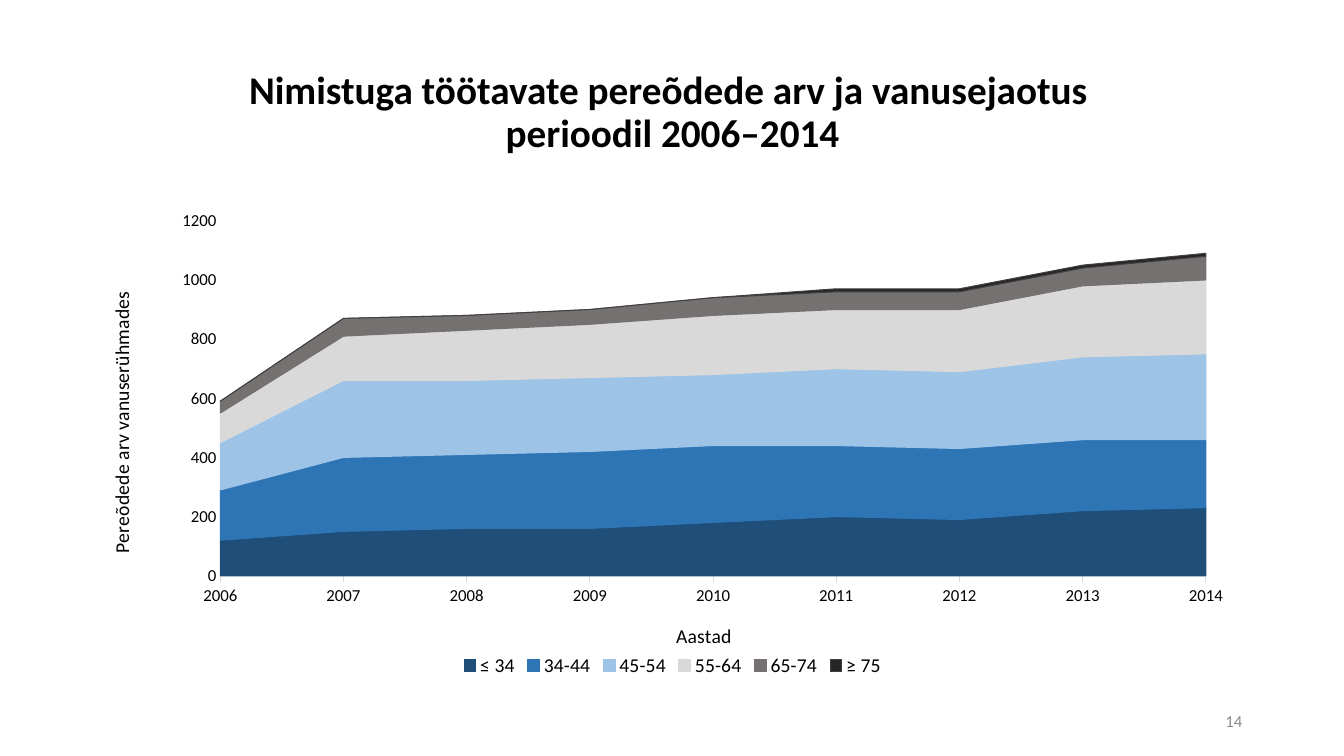
import pptx
import pptx.chart.data
import pptx.dml.color
import pptx.enum.chart
import pptx.enum.text
import pptx.oxml
import pptx.util
from pptx.util import Inches

COLORS = {
    "text": "000000", "number": "8C8C8C", "axis": "D9D9D9",
    "≤ 34": "1F4E79", "34-44": "2E75B6", "45-54": "9DC3E6",
    "55-64": "D9D9D9", "65-74": "767171", "≥ 75": "262626", "≥ 75 line": "404040",
}
NURSES = {
    "≤ 34": [120, 150, 160, 160, 180, 200, 190, 220, 230],
    "34-44": [170, 250, 250, 260, 260, 240, 240, 240, 230],
    "45-54": [160, 260, 250, 250, 240, 260, 260, 280, 290],
    "55-64": [100, 150, 170, 180, 200, 200, 210, 240, 250],
    "65-74": [40, 60, 50, 50, 60, 60, 60, 60, 80],
    "≥ 75": [0, 0, 0, 0, 0, 10, 10, 10, 10],
}
CHART_NS = "http://schemas.openxmlformats.org/drawingml/2006/chart"


def set_font(font, size, color="text", bold=False):
    settings = {"name": "Calibri", "size": pptx.util.Pt(size), "bold": bold}
    for name, value in settings.items():
        setattr(font, name, value)
    font.color.rgb = pptx.dml.color.RGBColor.from_string(COLORS[color])


def manual_layout(x, y, width=None, height=None):
    """Return a c:layout element; positions and sizes are fractions of the chart."""
    target = '<c:layoutTarget val="inner"/>' if width else ""
    values = {"xMode": "edge", "yMode": "edge", "x": x, "y": y, "w": width, "h": height}
    parts = "".join(f'<c:{tag} val="{value}"/>' for tag, value in values.items() if value is not None)
    return pptx.oxml.parse_xml(
        f'<c:layout xmlns:c="{CHART_NS}"><c:manualLayout>{target}{parts}</c:manualLayout></c:layout>')


deck = pptx.Presentation()
deck.slide_width, deck.slide_height = Inches(13.33), Inches(7.5)
page = deck.slides.add_slide(deck.slide_layouts[5])

# Title
title = page.shapes.title
title.left, title.top, title.width, title.height = map(Inches, (0.92, 0.4, 11.5, 1.45))
frame = title.text_frame
frame.text = "Nimistuga töötavate pereõdede arv ja vanusejaotus \vperioodil 2006–2014"
frame.auto_size = pptx.enum.text.MSO_AUTO_SIZE.NONE
frame.vertical_anchor = pptx.enum.text.MSO_ANCHOR.MIDDLE
para = frame.paragraphs[0]
para.alignment = pptx.enum.text.PP_ALIGN.CENTER
para.line_spacing = 0.9
for span in para.runs:
    set_font(span.font, 28, bold=True)

# Stacked area chart
data = pptx.chart.data.CategoryChartData()
data.categories = [str(year) for year in range(2006, 2015)]
for age_group, counts in NURSES.items():
    data.add_series(age_group, counts)
chart = page.shapes.add_chart(
    pptx.enum.chart.XL_CHART_TYPE.AREA_STACKED,
    Inches(0.92), Inches(2), Inches(11.5), Inches(4.76), data).chart
set_font(chart.font, 10)
chart.has_title = False
chart.has_legend = True
chart.legend.position = pptx.enum.chart.XL_LEGEND_POSITION.BOTTOM
chart.legend.include_in_layout = False
set_font(chart.legend.font, 14)

for series in chart.plots[0].series:
    line_color = COLORS.get(f"{series.name} line", COLORS[series.name])
    series.format.fill.solid()
    series.format.fill.fore_color.rgb = pptx.dml.color.RGBColor.from_string(COLORS[series.name])
    series.format.line.color.rgb = pptx.dml.color.RGBColor.from_string(line_color)
    series.format.line.width = pptx.util.Pt(0.75)

# Axes
tick_marks = pptx.enum.chart.XL_TICK_MARK
years, counts = chart.category_axis, chart.value_axis
for axis, caption, tick, x, y in (
        (years, "Aastad", tick_marks.OUTSIDE, 0.5, 0.87),
        (counts, "Pereõdede arv vanuserühmades", tick_marks.NONE, 0.01, 0.18)):
    axis.has_major_gridlines = False
    axis.major_tick_mark = tick
    axis.minor_tick_mark = tick_marks.NONE
    set_font(axis.tick_labels.font, 12)
    axis.axis_title.text_frame.text = caption
    set_font(axis.axis_title.text_frame.paragraphs[0].runs[0].font, 14)
    title_xml = axis.axis_title._element
    for layout in title_xml.findall(f"{{{CHART_NS}}}layout"):
        title_xml.remove(layout)
    title_xml.find(f"{{{CHART_NS}}}tx").addnext(manual_layout(x, y))
years.format.line.color.rgb = pptx.dml.color.RGBColor.from_string(COLORS["axis"])
years.format.line.width = pptx.util.Pt(0.75)
counts.format.line.fill.background()
counts.minimum_scale, counts.maximum_scale, counts.major_unit = 0, 1200, 200
counts.axis_title.text_frame._txBody.bodyPr.set("rot", "-5400000")
counts.axis_title.text_frame._txBody.bodyPr.set("vert", "horz")

plot_area = chart._chartSpace.chart.plotArea
for layout in plot_area.findall(f"{{{CHART_NS}}}layout"):
    plot_area.remove(layout)
plot_area.insert(0, manual_layout(0.11, 0.04, 0.85, 0.74))

# Slide number
number = page.shapes.add_textbox(Inches(9.42), Inches(6.95), Inches(3), Inches(0.4))
number.text_frame.word_wrap = True
number.text_frame.vertical_anchor = pptx.enum.text.MSO_ANCHOR.MIDDLE
para = number.text_frame.paragraphs[0]
para.alignment = pptx.enum.text.PP_ALIGN.RIGHT
span = para.add_run()
span.text = "14"
set_font(span.font, 12, "number")

deck.save("out.pptx")
